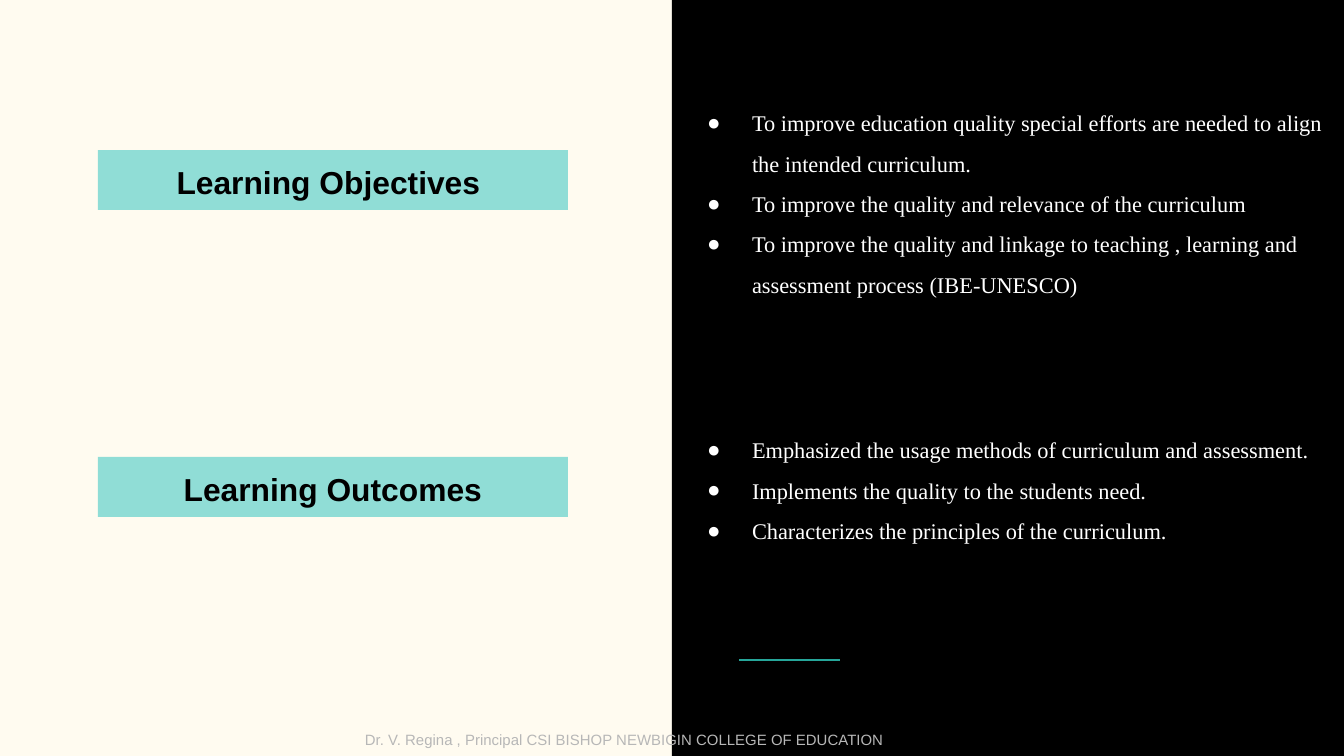
import pptx
import pptx.dml.color
import pptx.enum.shapes
import pptx.enum.text
import pptx.oxml.ns
import pptx.util
from lxml import etree

EMU_PER_PX = 914400 / 134.4
COLORS = {
    "background": "FFFBF0",
    "panel": "000000",
    "accent": "26A69A",
    "heading": "90DDD6",
    "heading_text": "000000",
    "list_text": "FFFFFF",
    "footer": "B7B7B7",
}
OBJECTIVES = [
    "To improve education quality special efforts are needed to align the intended curriculum.",
    "To improve the quality and relevance of the curriculum",
    "To improve the quality and linkage to teaching , learning and assessment process (IBE-UNESCO)",
]
OUTCOMES = [
    "Emphasized the usage methods of curriculum and assessment.",
    "Implements the quality to the students need.",
    "Characterizes the principles of the curriculum.",
]
FOOTER = "Dr. V. Regina , Principal CSI BISHOP NEWBIGIN COLLEGE OF EDUCATION"


def px(length):
    return pptx.util.Emu(round(length * EMU_PER_PX))


def color(name):
    return pptx.dml.color.RGBColor.from_string(COLORS[name])


def fill_solid(target, name):
    target.fill.solid()
    target.fill.fore_color.rgb = color(name)


def place(shape, left, top, width, height):
    shape.left, shape.top = px(left), px(top)
    shape.width, shape.height = px(width), px(height)


def write_text(shape, text, font_name, size, color_name, bold=False):
    text_frame = shape.text_frame
    text_frame.text = text
    text_frame.word_wrap = True
    text_frame.auto_size = pptx.enum.text.MSO_AUTO_SIZE.NONE
    text_frame.vertical_anchor = pptx.enum.text.MSO_ANCHOR.TOP
    text_frame.margin_left = text_frame.margin_right = px(13)
    text_frame.margin_top = text_frame.margin_bottom = px(13)
    for paragraph in text_frame.paragraphs:
        paragraph.space_before = paragraph.space_after = pptx.util.Pt(0)
        for run in paragraph.runs:
            run.font.name = font_name
            run.font.size = pptx.util.Pt(size)
            run.font.bold = bold
            run.font.color.rgb = color(color_name)


def add_bullet(paragraph):
    properties = paragraph._p.get_or_add_pPr()
    properties.set("marL", str(px(67)))
    properties.set("indent", str(px(-45)))
    qn = pptx.oxml.ns.qn
    bullet_color = etree.SubElement(properties, qn("a:buClr"))
    etree.SubElement(bullet_color, qn("a:srgbClr"), val=COLORS["list_text"])
    etree.SubElement(properties, qn("a:buChar"), char="●")


def format_heading(shape, text, top):
    place(shape, 98, top, 470, 60)
    fill_solid(shape, "heading")
    write_text(shape, text, "Arial", 17, "heading_text", bold=True)
    shape.text_frame.paragraphs[0].alignment = pptx.enum.text.PP_ALIGN.CENTER


def format_list(shape, items, top, height):
    place(shape, 672, top, 672, height)
    write_text(shape, "\n".join(items), "Times New Roman", 12, "list_text")
    for paragraph in shape.text_frame.paragraphs:
        paragraph.line_spacing = 1.5
        add_bullet(paragraph)


def add_panel(slide):
    panel = slide.shapes.add_shape(
        pptx.enum.shapes.MSO_SHAPE.RECTANGLE, px(672), px(0), px(672), px(756))
    panel.shadow.inherit = False
    fill_solid(panel, "panel")
    panel.line.fill.background()
    slide.shapes.title.element.addprevious(panel.element)


def add_accent_line(slide):
    line = slide.shapes.add_connector(
        pptx.enum.shapes.MSO_CONNECTOR.STRAIGHT, px(739), px(660), px(840), px(660))
    line.line.color.rgb = color("accent")
    line.line.width = pptx.util.Pt(1.5)
    etree.SubElement(line.element.spPr, pptx.oxml.ns.qn("a:effectLst"))


def add_footer(slide):
    footer = slide.shapes.add_textbox(px(352), px(718), px(732), px(38))
    write_text(footer, FOOTER, "Arial", 8, "footer")


def main():
    presentation = pptx.Presentation()
    presentation.slide_width, presentation.slide_height = px(1344), px(756)
    comparison_layout = presentation.slide_layouts[4]
    slide = presentation.slides.add_slide(comparison_layout)
    fill_solid(slide.background, "background")

    placeholders = {shape.placeholder_format.idx: shape for shape in slide.placeholders}
    add_panel(slide)
    add_accent_line(slide)
    format_heading(placeholders[0], "Learning Objectives ", 150)
    format_heading(placeholders[1], "Learning Outcomes", 457)
    format_list(placeholders[2], OBJECTIVES, 83, 246)
    format_list(placeholders[4], OUTCOMES, 410, 220)
    unused = placeholders[3].element
    unused.getparent().remove(unused)
    add_footer(slide)

    presentation.save("out.pptx")


if __name__ == "__main__":
    main()
